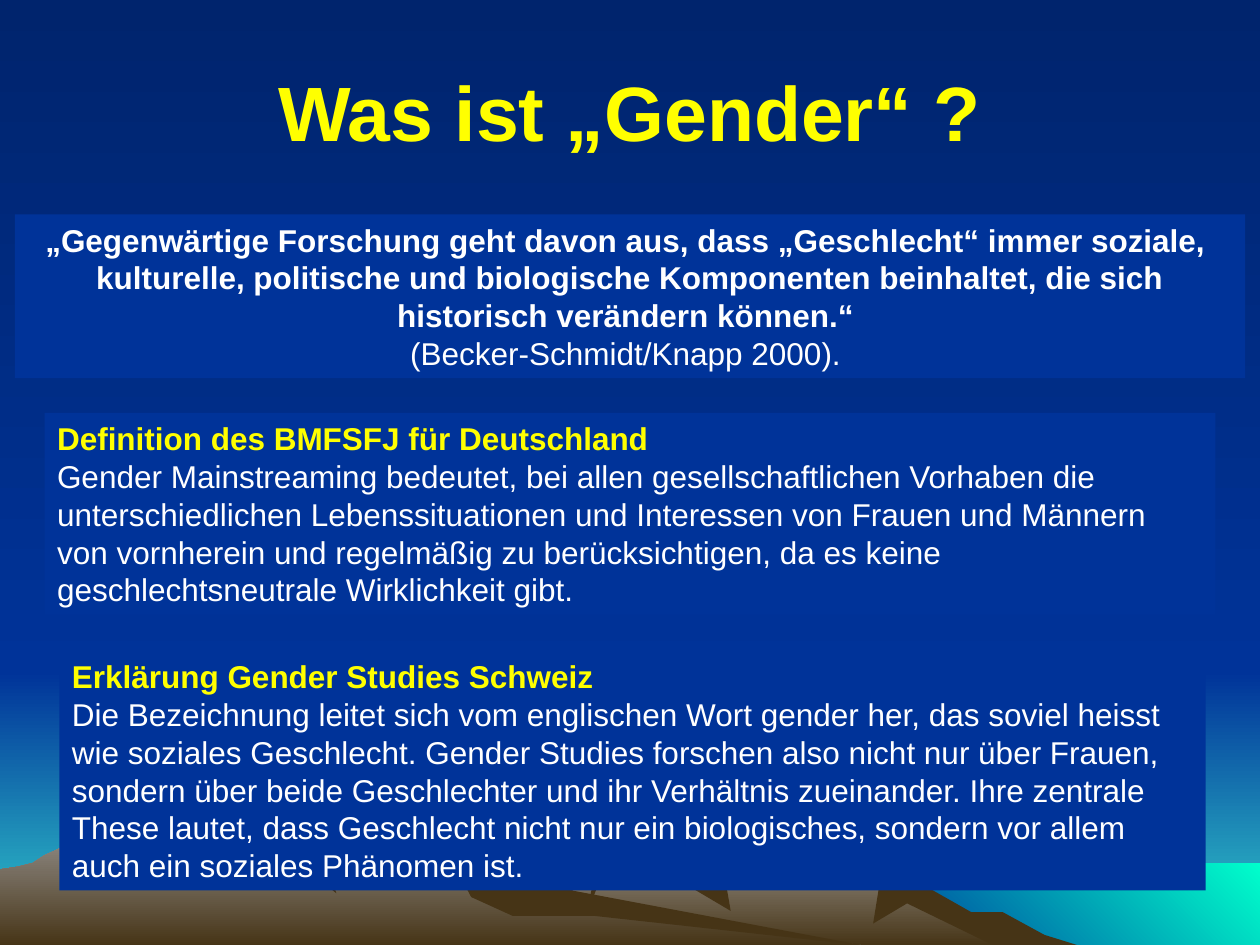
from pptx import Presentation
from pptx.dml.color import RGBColor
from pptx.enum.shapes import MSO_SHAPE
from pptx.enum.text import MSO_ANCHOR, MSO_AUTO_SIZE, PP_ALIGN
from pptx.util import Pt

NIGHT = RGBColor(0x00, 0x24, 0x6D)
BLUE = RGBColor(0x00, 0x33, 0x99)
TEAL = RGBColor(0x33, 0xCC, 0xCC)
AQUA = RGBColor(0x00, 0xFF, 0xCC)
STONE = RGBColor(0xA5, 0xA2, 0x9F)
GREY = RGBColor(0x93, 0x8F, 0x8B)
EARTH = RGBColor(0x46, 0x34, 0x16)
YELLOW = RGBColor(0xFF, 0xFF, 0x00)
WHITE = RGBColor(0xFF, 0xFF, 0xFF)

DOWN, UP_RIGHT = 270, 45  # gradient directions, counter-clockwise
GRID = 0.72  # points per unit of the landscape outlines

# Landscape outlines, back to front
LOWER_SKY = [(1000, 750), (0, 750), (0, 533), (1000, 533)]
UPPER_SKY = [(1000, 533), (0, 533), (0, 0), (1000, 0)]
SEA = [(1000, 752), (683, 752), (683, 685), (1000, 685)]
RIGHT_MOUNTAIN = [
    (802, 740), (778, 727), (764, 723), (723, 698), (702, 671), (685, 660),
    (676, 666), (656, 671), (629, 671), (613, 681), (566, 697), (536, 690),
    (529, 676), (526, 673), (509, 669), (497, 671), (486, 673), (474, 661),
    (471, 658), (465, 658), (450, 664), (438, 671), (430, 671), (424, 672),
    (405, 681), (394, 685), (355, 698), (327, 709), (277, 739), (258, 751),
    (821, 751)]
RIGHT_SHADOWS = [
    [(796, 724), (771, 724), (734, 703), (707, 671), (685, 660), (689, 664),
     (685, 671), (691, 680), (698, 702), (693, 733), (720, 717), (792, 752),
     (858, 751), (829, 742)],
    [(471, 658), (474, 662), (469, 664), (468, 671), (472, 680), (473, 690),
     (465, 727), (474, 704), (479, 700), (487, 683), (490, 682), (490, 676),
     (497, 671), (493, 670)],
    [(529, 676), (528, 678), (526, 683), (536, 697), (580, 723), (576, 700),
     (592, 689), (570, 692), (542, 685)]]
LEFT_MOUNTAIN = [
    (690, 751), (667, 748), (432, 712), (354, 665), (331, 663), (327, 668),
    (323, 668), (318, 664), (296, 676), (279, 681), (271, 682), (260, 676),
    (236, 681), (223, 663), (219, 660), (212, 658), (196, 658), (191, 662),
    (178, 666), (160, 671), (148, 667), (143, 667), (132, 671), (128, 671),
    (123, 669), (111, 669), (94, 671), (68, 662), (56, 669), (46, 674),
    (35, 679), (26, 685), (14, 688), (0, 690), (0, 751)]
LEFT_SHADOWS = [
    [(212, 663), (208, 669), (219, 678), (232, 690), (241, 688), (267, 709),
     (261, 689), (271, 682), (260, 674), (245, 668), (232, 663), (220, 661),
     (213, 659)],
    [(370, 668), (354, 665), (344, 665), (339, 669), (337, 687), (348, 683),
     (353, 688), (363, 691), (374, 712), (407, 727), (472, 727), (690, 751),
     (683, 750), (455, 707), (427, 692), (411, 684), (401, 681), (386, 675)]]


class GenderSlide:
    font = "Arial"
    title_size = 44
    text_size = 18

    def __init__(self, presentation):
        self.slide = presentation.slides.add_slide(presentation.slide_layouts[5])
        self.shade(self.slide.background.fill, (NIGHT, BLUE))

    def shade(self, fill, colors, angle=DOWN):
        """Fill with one colour, or with a linear gradient between two."""
        if len(colors) == 1:
            fill.solid()
            fill.fore_color.rgb = colors[0]
            return
        fill.gradient()
        fill.gradient_angle = angle
        for stop, color, position in zip(fill.gradient_stops, colors, (0, 1)):
            stop.color.rgb = color
            stop.position = position

    def style(self, paragraph, size, color, bold, align):
        paragraph.alignment = align
        for run in paragraph.runs:
            run.font.name = self.font
            run.font.size = Pt(size)
            run.font.bold = bold
            run.font.color.rgb = color

    def landscape(self, outline, *colors, angle=DOWN):
        builder = self.slide.shapes.build_freeform(*outline[0], scale=Pt(GRID))
        builder.add_line_segments(outline[1:], close=True)
        part = builder.convert_to_shape()
        part.shadow.inherit = False
        part.line.fill.background()
        self.shade(part.fill, colors, angle)

    def title(self, text, left, top, width, height):
        heading = self.slide.shapes.title
        heading.left, heading.top = Pt(left), Pt(top)
        heading.width, heading.height = Pt(width), Pt(height)
        heading.text_frame.text = text
        heading.text_frame.vertical_anchor = MSO_ANCHOR.MIDDLE
        self.style(heading.text_frame.paragraphs[0], self.title_size, YELLOW,
                   True, PP_ALIGN.CENTER)
        # Bring the heading in front of the landscape
        heading.element.getparent().append(heading.element)

    def panel(self, left, top, width, height, lines, align=PP_ALIGN.LEFT):
        """Add a blue box; lines holds (text, colour, bold) per paragraph."""
        box = self.slide.shapes.add_shape(
            MSO_SHAPE.RECTANGLE, Pt(left), Pt(top), Pt(width), Pt(height))
        box.shadow.inherit = False
        box.line.fill.background()
        self.shade(box.fill, (BLUE,))
        frame = box.text_frame
        frame.word_wrap = True
        frame.auto_size = MSO_AUTO_SIZE.SHAPE_TO_FIT_TEXT
        frame.vertical_anchor = MSO_ANCHOR.MIDDLE
        frame.text = "\n".join(text for text, _, _ in lines)
        for paragraph, (_, color, bold) in zip(frame.paragraphs, lines):
            self.style(paragraph, self.text_size, color, bold, align)


def main():
    presentation = Presentation()
    presentation.slide_width, presentation.slide_height = Pt(720), Pt(540)
    page = GenderSlide(presentation)

    page.landscape(LOWER_SKY, BLUE, TEAL)
    page.landscape(UPPER_SKY, NIGHT, BLUE)
    page.landscape(SEA, BLUE, AQUA, angle=UP_RIGHT)
    for mountain, light, shadows in (
            (RIGHT_MOUNTAIN, STONE, RIGHT_SHADOWS),
            (LEFT_MOUNTAIN, GREY, LEFT_SHADOWS)):
        page.landscape(mountain, light, EARTH)
        for shadow in shadows:
            page.landscape(shadow, EARTH)

    page.title("Was ist „Gender“ ?", 36, 18, 648, 90)
    page.panel(8.5, 122.5, 703, 93.6, [
        ("„Gegenwärtige Forschung geht davon aus, dass „Geschlecht“ immer "
         "soziale, ", WHITE, True),
        ("kulturelle, politische und biologische Komponenten beinhaltet, die "
         "sich historisch verändern können.“ ", WHITE, True),
        ("(Becker-Schmidt/Knapp 2000). ", WHITE, False),
    ], PP_ALIGN.CENTER)
    page.panel(25.5, 236, 669, 115.2, [
        ("Definition des BMFSFJ für Deutschland", YELLOW, True),
        ("Gender Mainstreaming bedeutet, bei allen gesellschaftlichen Vorhaben "
         "die unterschiedlichen Lebenssituationen und Interessen von Frauen und "
         "Männern von vornherein und regelmäßig zu berücksichtigen, da es keine "
         "geschlechtsneutrale Wirklichkeit gibt.", WHITE, False),
    ])
    page.panel(34, 372, 655, 136.8, [
        ("Erklärung Gender Studies Schweiz", YELLOW, True),
        ("Die Bezeichnung leitet sich vom englischen Wort gender her, das soviel "
         "heisst wie soziales Geschlecht. Gender Studies forschen also nicht nur "
         "über Frauen, sondern über beide Geschlechter und ihr Verhältnis "
         "zueinander. Ihre zentrale These lautet, dass Geschlecht nicht nur ein "
         "biologisches, sondern vor allem auch ein soziales Phänomen ist.",
         WHITE, False),
    ])
    presentation.save("out.pptx")


if __name__ == "__main__":
    main()
